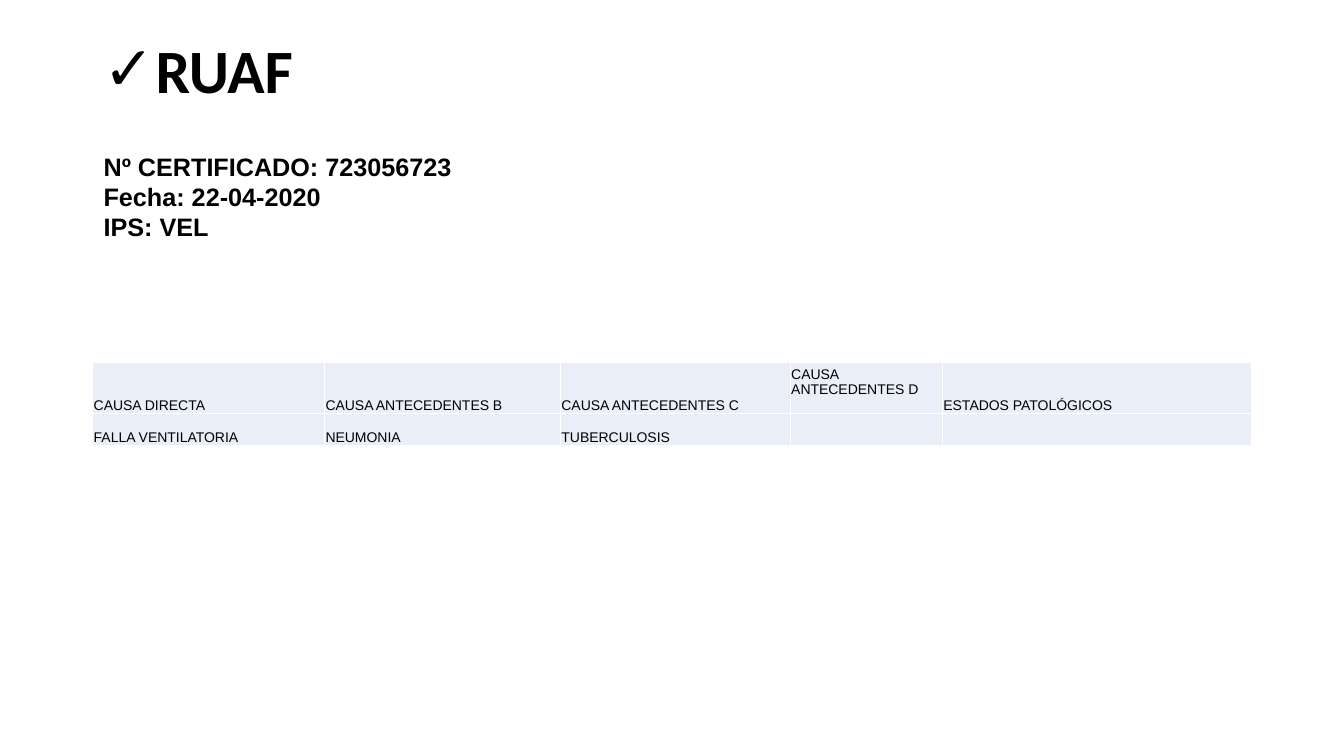
from dataclasses import dataclass

from lxml import etree
from pptx import Presentation
from pptx.dml.color import RGBColor
from pptx.enum.text import MSO_ANCHOR, MSO_AUTO_SIZE, PP_ALIGN
from pptx.oxml.ns import qn
from pptx.util import Pt

MIDDLE, BOTTOM = MSO_ANCHOR.MIDDLE, MSO_ANCHOR.BOTTOM
NO_AUTOSIZE = MSO_AUTO_SIZE.NONE
LEFT = PP_ALIGN.LEFT
TITLE_ONLY = 5


@dataclass(frozen=True)
class Theme:
    ink: str = "000000"
    cell: str = "EAEFF7"
    border: str = "FFFFFF"
    title_font: str = "Calibri"
    body_font: str = "Arial"
    title_size: float = 44
    body_size: float = 18
    table_size: float = 10


@dataclass(frozen=True)
class Box:
    left: float
    top: float
    width: float
    height: float


@dataclass(frozen=True)
class CauseColumn:
    width: float
    heading: str
    value: str = ""
    bottom_margin: float = 0


THEME = Theme()
TITLE_BOX = Box(66.96, 0, 828, 104.4)
DETAILS_BOX = Box(66.96, 104.4, 684, 72.72)
TABLE_BOX = Box(66.24, 259.2, 828, 58)
ROW_HEIGHTS = (36.4, 21.6)
CELL_MARGIN = 0.72
DETAILS = ("Nº CERTIFICADO: 723056723", "Fecha: 22-04-2020", "IPS: VEL")
CAUSES = (
    CauseColumn(165.6, "CAUSA DIRECTA", "FALLA VENTILATORIA"),
    CauseColumn(168.48, "CAUSA ANTECEDENTES B", "NEUMONIA"),
    CauseColumn(164.16, "CAUSA ANTECEDENTES C", "TUBERCULOSIS"),
    # One line of space is kept below this heading
    CauseColumn(108.72, "CAUSA ANTECEDENTES D", bottom_margin=11.5),
    CauseColumn(221.04, "ESTADOS PATOLÓGICOS"),
)


def place(shape, box: Box) -> None:
    shape.left, shape.top = Pt(box.left), Pt(box.top)
    shape.width, shape.height = Pt(box.width), Pt(box.height)


def write(paragraph, text: str, *, font: str, size: float, bold: bool = False) -> None:
    paragraph.alignment = LEFT
    run = paragraph.add_run()
    run.text = text
    run.font.name = font
    run.font.size = Pt(size)
    run.font.bold = bold
    run.font.color.rgb = RGBColor.from_string(THEME.ink)


def add_bullet(paragraph, character: str, indent: float) -> None:
    properties = paragraph._p.get_or_add_pPr()
    properties.set("marL", str(Pt(indent)))
    properties.set("indent", str(-Pt(indent)))
    etree.SubElement(properties, qn("a:buFont"), typeface=THEME.body_font)
    etree.SubElement(properties, qn("a:buChar"), char=character)


def set_borders(cell, color: str, width: float) -> None:
    properties = cell._tc.get_or_add_tcPr()
    for position, side in enumerate(("a:lnL", "a:lnR", "a:lnT", "a:lnB")):
        line = etree.Element(qn(side), w=str(Pt(width)))
        fill = etree.SubElement(line, qn("a:solidFill"))
        etree.SubElement(fill, qn("a:srgbClr"), val=color)
        properties.insert(position, line)


def fill_cell(cell, text: str, bottom_margin: float = 0) -> None:
    cell.margin_left = cell.margin_right = cell.margin_top = Pt(CELL_MARGIN)
    cell.margin_bottom = Pt(bottom_margin)
    cell.vertical_anchor = BOTTOM
    cell.fill.solid()
    cell.fill.fore_color.rgb = RGBColor.from_string(THEME.cell)
    set_borders(cell, THEME.border, 1)
    # Empty cells also take the table size, so the row keeps its height
    write(cell.text_frame.paragraphs[0], text, font=THEME.body_font, size=THEME.table_size)


def add_title(slide) -> None:
    title = slide.shapes.title
    place(title, TITLE_BOX)
    frame = title.text_frame
    frame.auto_size = NO_AUTOSIZE
    frame.vertical_anchor = MIDDLE
    paragraph = frame.paragraphs[0]
    paragraph.line_spacing = 0.9
    write(paragraph, "RUAF", font=THEME.title_font, size=THEME.title_size, bold=True)
    add_bullet(paragraph, "✓", 22.5)


def add_details(slide) -> None:
    details = slide.shapes.add_textbox(0, 0, 0, 0)
    place(details, DETAILS_BOX)
    frame = details.text_frame
    frame.word_wrap = True
    for index, text in enumerate(DETAILS):
        paragraph = frame.add_paragraph() if index else frame.paragraphs[0]
        write(paragraph, text, font=THEME.body_font, size=THEME.body_size, bold=True)


def add_causes(slide) -> None:
    graphic = slide.shapes.add_table(len(ROW_HEIGHTS), len(CAUSES), 0, 0, 0, 0)
    place(graphic, TABLE_BOX)
    table = graphic.table
    table.first_row = table.horz_banding = False
    for row, height in zip(table.rows, ROW_HEIGHTS):
        row.height = Pt(height)
    for index, cause in enumerate(CAUSES):
        table.columns[index].width = Pt(cause.width)
        fill_cell(table.cell(0, index), cause.heading, cause.bottom_margin)
        fill_cell(table.cell(1, index), cause.value)


def main() -> None:
    presentation = Presentation()
    presentation.slide_width, presentation.slide_height = Pt(960), Pt(540)
    slide = presentation.slides.add_slide(presentation.slide_layouts[TITLE_ONLY])
    # Heading and certificate details
    add_title(slide)
    add_details(slide)
    # Causes of death
    add_causes(slide)
    presentation.save("out.pptx")


if __name__ == "__main__":
    main()
